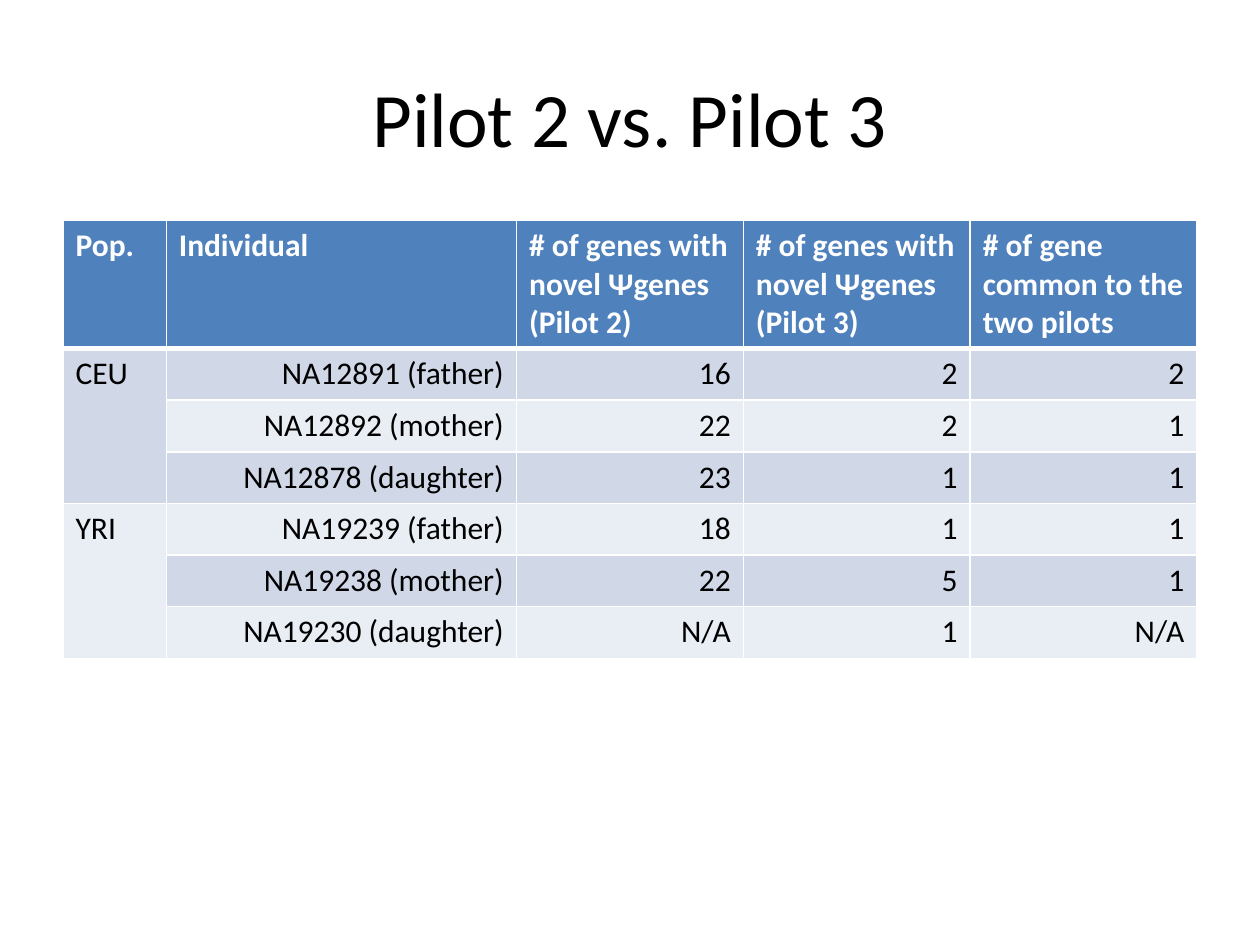
from lxml.etree import SubElement
from pptx import Presentation
from pptx.dml.color import RGBColor
from pptx.enum.text import MSO_ANCHOR, PP_ALIGN as Align
from pptx.oxml.ns import qn
from pptx.util import Inches, Pt

HEADER = [
    "Pop.",
    "Individual",
    "# of genes with novel Ψgenes (Pilot 2)",
    "# of genes with novel Ψgenes (Pilot 3)",
    "# of gene common to the two pilots",
]
FAMILIES = {
    "CEU": [
        ("NA12891 (father)", "16", "2", "2"),
        ("NA12892 (mother)", "22", "2", "1"),
        ("NA12878 (daughter)", "23", "1", "1"),
    ],
    "YRI": [
        ("NA19239 (father)", "18", "1", "1"),
        ("NA19238 (mother)", "22", "5", "1"),
        ("NA19230 (daughter)", "N/A", "1", "N/A"),
    ],
}
COL_WIDTHS = [0.82, 2.78, 1.8, 1.8, 1.8]
HEADER_HEIGHT, ROW_HEIGHT = 1.01, 0.41
BLUE, WHITE, BLACK = "4F81BD", "FFFFFF", "000000"
BANDS = ["D0D8E8", "E9EDF4"]


def rgb(color):
    """Turn a hex string into a colour."""
    return RGBColor.from_string(color)


def add_text(tf, text, size, color, align, bold=False):
    """Write one formatted run into the first paragraph."""
    p = tf.paragraphs[0]
    p.alignment = align
    r = p.add_run()
    r.text = text
    r.font.name = "Calibri"
    r.font.size = Pt(size)
    r.font.bold = bold
    r.font.color.rgb = rgb(color)


def set_borders(cell, **widths):
    """Draw white borders with the given point width for each side."""
    tc_pr = cell._tc.get_or_add_tcPr()
    for side, width in widths.items():
        ln = SubElement(tc_pr, qn(f"a:ln{side}"), w=str(Pt(width)))
        fill = SubElement(ln, qn("a:solidFill"))
        SubElement(fill, qn("a:srgbClr"), val=WHITE)


def style_cell(cell, fill, top=1, bottom=1):
    """Give a cell its borders and fill."""
    set_borders(cell, L=1, R=1, T=top, B=bottom)
    cell.fill.solid()
    cell.fill.fore_color.rgb = rgb(fill)


def add_title(s, text):
    """Place and fill the title placeholder."""
    sp = s.shapes.title
    sp.left, sp.top = Inches(0.5), Inches(0.3)
    sp.width, sp.height = Inches(9), Inches(1.25)
    sp.text_frame.vertical_anchor = MSO_ANCHOR.MIDDLE
    add_text(sp.text_frame, text, 44, BLACK, Align.CENTER)


def add_family(table, top, population, members):
    """Fill the rows of one population and merge its label cell."""
    for i, member in enumerate(members, top):
        for j, text in enumerate(("", *member)):
            cell = table.cell(i, j)
            band_row = i if j else top
            style_cell(cell, BANDS[(band_row - 1) % 2], top=3 if i == 1 else 1)
            if text:
                add_text(cell.text_frame, text, 18, BLACK, Align.RIGHT)
    label = table.cell(top, 0)
    label.merge(table.cell(top + len(members) - 1, 0))
    add_text(label.text_frame, population, 18, BLACK, Align.LEFT)


def add_gene_table(s):
    """Add the table that compares the two pilots."""
    count = sum(len(members) for members in FAMILIES.values())
    height = HEADER_HEIGHT + count * ROW_HEIGHT
    table = s.shapes.add_table(
        count + 1, len(HEADER), Inches(0.5), Inches(1.75), Inches(9), Inches(height)
    ).table
    for col, width in zip(table.columns, COL_WIDTHS):
        col.width = Inches(width)
    for i, row in enumerate(table.rows):
        row.height = Inches(ROW_HEIGHT if i else HEADER_HEIGHT)
    for j, text in enumerate(HEADER):
        cell = table.cell(0, j)
        style_cell(cell, BLUE, bottom=3)
        add_text(cell.text_frame, text, 18, WHITE, Align.LEFT, bold=True)
    top = 1
    for population, members in FAMILIES.items():
        add_family(table, top, population, members)
        top += len(members)


def main():
    """Build and save the slide."""
    prs = Presentation()
    prs.slide_width, prs.slide_height = Inches(10), Inches(7.5)
    s = prs.slides.add_slide(prs.slide_layouts[5])
    add_title(s, "Pilot 2 vs. Pilot 3")
    add_gene_table(s)
    prs.save("out.pptx")


if __name__ == "__main__":
    main()
